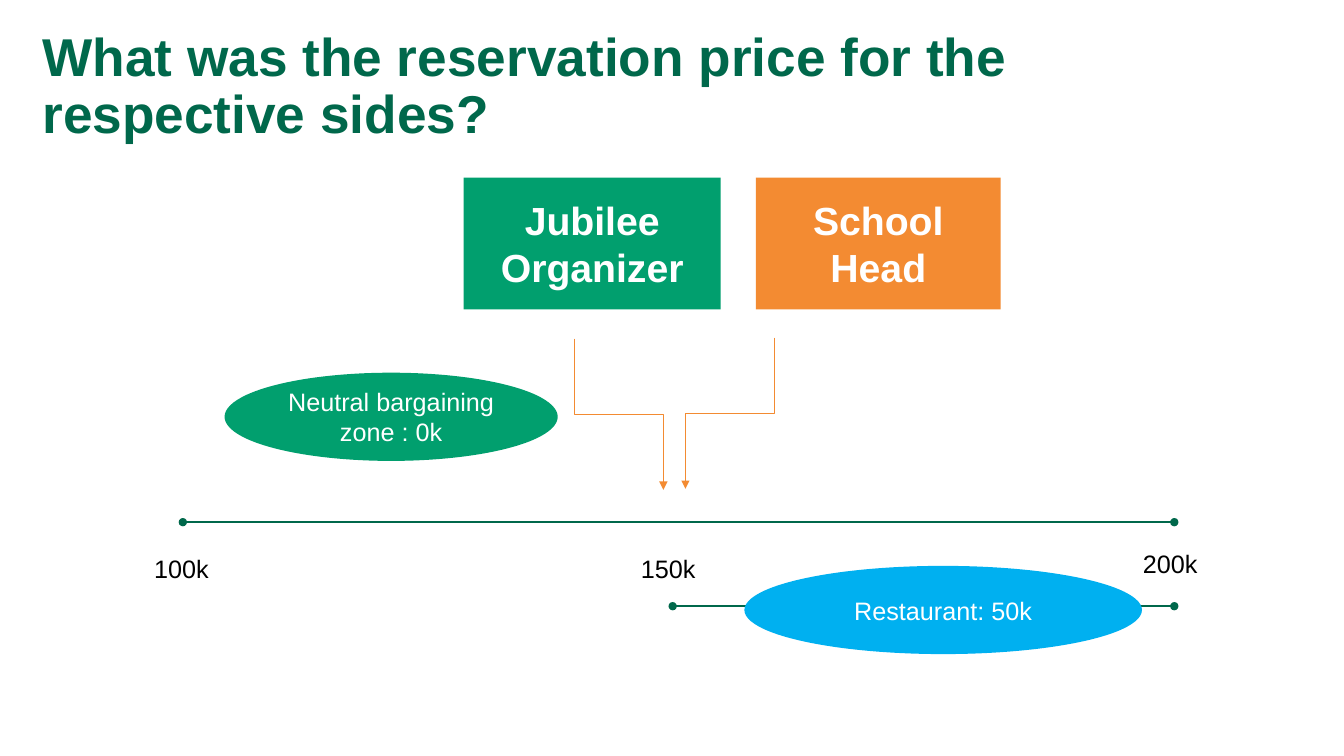
import pptx
import pptx.util
import pptx.dml.color
import pptx.enum.shapes
import pptx.enum.text
import pptx.oxml
import pptx.oxml.ns

Pt = pptx.util.Pt
Rgb = pptx.dml.color.RGBColor.from_string
Kind = pptx.enum.shapes.MSO_SHAPE
Link = pptx.enum.shapes.MSO_CONNECTOR
Align = pptx.enum.text.PP_ALIGN
Anchor = pptx.enum.text.MSO_ANCHOR

theme = {
    "dark": "00684B", "green": "019F6E", "orange": "F38B32",
    "blue": "00B0F0", "white": "FFFFFF", "black": "000000",
    "face": "Arial", "title": 38, "box": 28, "body": 18,
}


def write(shape, lines, size, color, bold=False, **style):
    frame = shape.text_frame
    frame.word_wrap = True
    frame.text = "\n".join(lines)
    for para in frame.paragraphs:
        for name, value in style.items():
            setattr(para, name, value)
        form = {"name": theme["face"], "size": Pt(theme[size]), "bold": bold}
        for run in para.runs:
            for name, value in form.items():
                setattr(run.font, name, value)
            run.font.color.rgb = Rgb(theme[color])
    return frame


def draw(kind, ends, color, width, **tips):
    line = slide.shapes.add_connector(kind, *map(Pt, ends))
    line.line.color.rgb = Rgb(theme[color])
    line.line.width = Pt(width)
    stroke = line.line._get_or_add_ln()
    for tag, tip in tips.items():
        end = pptx.oxml.ns.qn("a:" + tag)
        stroke.append(stroke.makeelement(end, {"type": tip}))
    props = line._element.spPr
    props.append(props.makeelement(pptx.oxml.ns.qn("a:effectLst"), {}))
    return line


deck = pptx.Presentation()
deck.slide_width, deck.slide_height = Pt(960), Pt(540)
slide = deck.slides.add_slide(deck.slide_layouts[6])

# Title
title = slide.shapes.add_textbox(Pt(30.24), Pt(21.6), Pt(841), Pt(74.2))
frame = write(title, ["What was the reservation price for the respective sides?"],
              "title", "dark", True, line_spacing=0.9)
for side in ("left", "right", "top", "bottom"):
    setattr(frame, "margin_" + side, 0)

# Price scale and restaurant range
for left, top in ((130.6, 373), (480.5, 433)):
    draw(Link.STRAIGHT, (left, top, 838.8, top), "dark", 1.5,
         headEnd="oval", tailEnd="oval")

# Scale labels
for text, left, top in (("100k", 103, 391.7), ("150k", 450.7, 391.7),
                        ("200k", 809.3, 388.1)):
    label = slide.shapes.add_textbox(Pt(left), Pt(top), Pt(59), Pt(29))
    write(label, [text], "body", "black")

# Parties and zones
blocks = (
    (Kind.RECTANGLE, (331.2, 127, 183.6, 94), "green", "box", ["Jubilee Organizer"]),
    (Kind.RECTANGLE, (540, 127, 174.7, 94), "orange", "box", ["School", "Head"]),
    (Kind.OVAL, (160.4, 266.2, 238, 63), "green", "body",
     ["Neutral bargaining zone : 0k"]),
    (Kind.OVAL, (531.7, 404.2, 284, 63), "blue", "body", ["Restaurant: 50k"]),
)
for kind, place, color, size, lines in blocks:
    shape = slide.shapes.add_shape(kind, *map(Pt, place))
    shape.shadow.inherit = False
    shape.fill.solid()
    shape.fill.fore_color.rgb = Rgb(theme[color])
    shape.line.fill.background()
    frame = write(shape, lines, size, "white", size == "box",
                  alignment=Align.CENTER)
    frame.vertical_anchor = Anchor.MIDDLE

# Arrows from the parties to the scale, each turned a quarter
for ends, turn in (((496.1, 264.2, 388.1, 327.6), 270),
                   ((467.3, 263.5, 575.3, 326.9), 90)):
    arrow = draw(Link.ELBOW, ends, "orange", 0.5, tailEnd="triangle")
    arrow.rotation = turn

deck.save("out.pptx")
